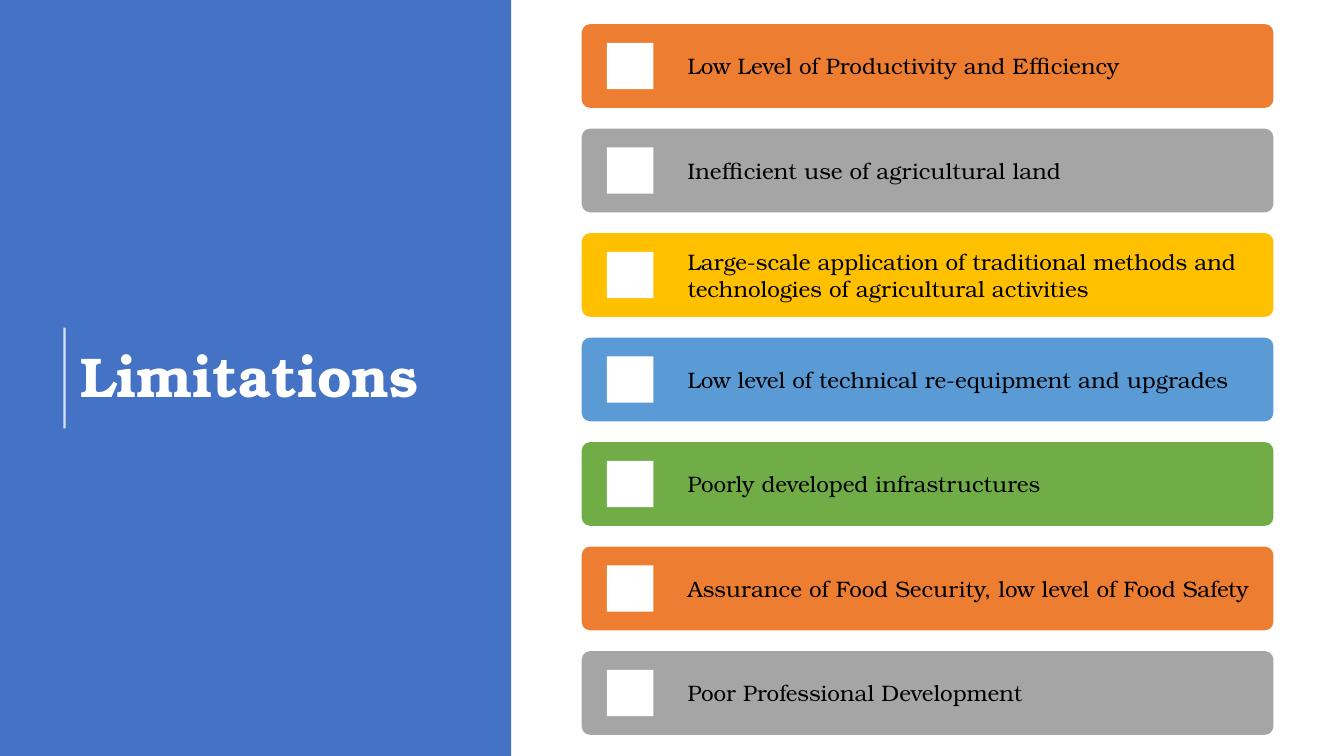
from lxml import etree
from pptx import Presentation
from pptx import util as u
from pptx.dml.color import RGBColor
from pptx.enum import shapes, text
from pptx.oxml.ns import qn

FONT = "TeX Gyre Bonum"
COLORS = {
    "panel": "4472C4", "white": "FFFFFF", "black": "000000",
    "orange": "ED7D31", "gray": "A5A5A5", "gold": "FFC000",
    "blue": "5B9BD5", "green": "70AD47",
}
LIMITATIONS = [
    ("Low Level of Productivity and Efficiency", "orange"),
    ("Inefficient use of agricultural land", "gray"),
    ("Large-scale application of traditional methods and "
     "technologies of agricultural activities", "gold"),
    ("Low level of technical re-equipment and upgrades", "blue"),
    ("Poorly developed infrastructures", "green"),
    ("Assurance of Food Security, low level of Food Safety", "orange"),
    ("Poor Professional Development", "gray"),
]


def rgb(name):
    return RGBColor.from_string(COLORS[name])


def add_block(parent, kind, x, y, w, h, color):
    sp = parent.add_shape(kind, u.Inches(x), u.Inches(y), u.Inches(w), u.Inches(h))
    sp.shadow.inherit = False
    sp.fill.solid()
    sp.fill.fore_color.rgb = rgb(color)
    sp.line.fill.background()
    return sp


def write(sp, content, size, color, bold=False):
    tf = sp.text_frame
    tf.word_wrap = True
    tf.auto_size = text.MSO_AUTO_SIZE.NONE
    tf.vertical_anchor = text.MSO_ANCHOR.MIDDLE
    tf.text = content
    p = tf.paragraphs[0]
    p.alignment = text.PP_ALIGN.LEFT
    p.line_spacing = 0.9 if bold else 1.0
    f = p.runs[0].font
    f.name, f.size, f.bold = FONT, u.Pt(size), bold
    f.color.rgb = rgb(color)
    return tf


def title_panel(s, x, y, w, h):
    # Coloured panel behind the title
    panel = add_block(s.shapes, shapes.MSO_SHAPE.RECTANGLE, x, y, w, h, "panel")
    title = s.shapes.title
    title.element.addprevious(panel.element)
    title.left, title.top = u.Inches(x + 0.7), u.Inches(y + 0.75)
    title.width, title.height = u.Inches(w - 0.77), u.Inches(h - 1.48)
    write(title, "Limitations", 40, "white", bold=True)

    # Translucent rule beside the title
    rule_x, mid = u.Inches(x + 0.64), y + h / 2
    rule = s.shapes.add_connector(shapes.MSO_CONNECTOR.STRAIGHT, rule_x,
                                  u.Inches(mid + 0.5), rule_x, u.Inches(mid - 0.5))
    rule.line.width = u.Pt(1.5)
    rule.line.color.rgb = rgb("white")
    color = rule.element.xpath(".//a:srgbClr")[0]
    etree.SubElement(color, qn("a:alpha")).set("val", "80000")
    etree.SubElement(rule.element.spPr, qn("a:effectLst"))


def limitation_bar(parent, x, y, w, h, content, color):
    bar = add_block(parent, shapes.MSO_SHAPE.ROUNDED_RECTANGLE, x, y, w, h, color)
    bar.adjustments[0] = 0.1

    # Square icon space, centred vertically
    icon = 0.46
    add_block(parent, shapes.MSO_SHAPE.RECTANGLE, x + 0.25, y + (h - icon) / 2,
              icon, icon, "white")

    # Label to the right of the icon
    indent = 0.96
    label = parent.add_textbox(u.Inches(x + indent), u.Inches(y),
                               u.Inches(w - indent), u.Inches(h))
    tf = write(label, content, 16, "black")
    tf.margin_left = tf.margin_right = u.Inches(0.09)
    tf.margin_top = tf.margin_bottom = u.Inches(0.09)


def limitations_list(s, x, y, w, h):
    bar_h = 0.83
    pitch = (h - bar_h) / (len(LIMITATIONS) - 1)
    group = s.shapes.add_group_shape()
    for i, (content, color) in enumerate(LIMITATIONS):
        limitation_bar(group.shapes, x, y + i * pitch, w, bar_h, content, color)


def main():
    prs = Presentation()
    prs.slide_width, prs.slide_height = u.Inches(13.33), u.Inches(7.5)
    s = prs.slides.add_slide(prs.slide_layouts[5])
    title_panel(s, 0, 0, 5.07, 7.5)
    limitations_list(s, 5.77, 0.24, 6.86, 7.05)
    prs.save("out.pptx")


if __name__ == "__main__":
    main()
